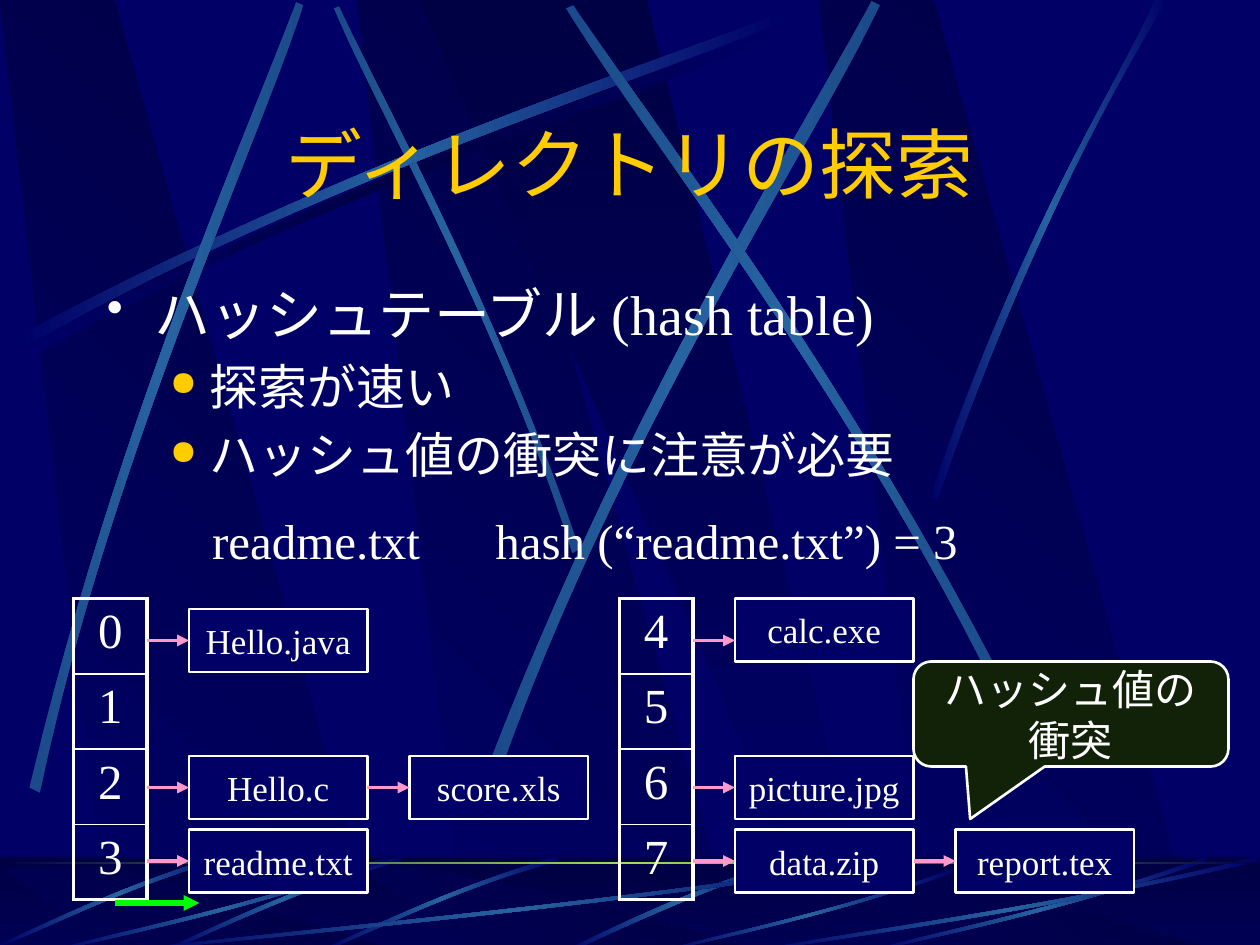
from lxml.etree import SubElement
from pptx import Presentation
from pptx.dml.color import RGBColor
from pptx.enum.shapes import MSO_CONNECTOR, MSO_SHAPE
from pptx.enum.text import MSO_ANCHOR, PP_ALIGN
from pptx.oxml.ns import qn
from pptx.util import Pt

PX = 7620  # 120 px to the inch
HEX = {"navy": "000066", "dark": "000044", "beam": "2663A0", "edge": "1B4A8A",
       "lime": "9CE157", "gold": "FFCC00", "white": "FFFFFF", "pink": "FF99CC",
       "green": "00FF00", "moss": "122208"}
RGB = {name: RGBColor.from_string(code) for name, code in HEX.items()}

deck = Presentation()
deck.slide_width, deck.slide_height = 1200 * PX, 900 * PX
slide = deck.slides.add_slide(deck.slide_layouts[6])
slide.background.fill.solid()
slide.background.fill.fore_color.rgb = RGB["navy"]
shapes = slide.shapes


def shade(shape, names, angle):
    """Fill with evenly spaced colours; the angle turns clockwise."""
    shape.shadow.inherit = False
    shape.line.fill.background()
    shape.fill.gradient()
    shape.fill.gradient_angle = (360 - angle) % 360
    stops = shape.element.spPr.find(qn("a:gradFill")).find(qn("a:gsLst"))
    for old in list(stops):
        stops.remove(old)
    for i, name in enumerate(names):
        stop = SubElement(stops, qn("a:gs"), pos=str(100000 * i // (len(names) - 1)))
        SubElement(stop, qn("a:srgbClr"), val=HEX[name])


def write(frame, lines, size, color="white", align=PP_ALIGN.CENTER, wrap=True):
    look = {"word_wrap": wrap, "margin_left": 12 * PX, "margin_right": 12 * PX,
            "margin_top": 6 * PX, "margin_bottom": 6 * PX}
    for key, value in look.items():
        setattr(frame, key, value)
    for i, line in enumerate(lines):
        para = frame.add_paragraph() if i else frame.paragraphs[0]
        para.alignment = align
        run = para.add_run()
        run.text = line
        for key, value in {"name": "Times New Roman", "size": Pt(size)}.items():
            setattr(run.font, key, value)
        run.font.color.rgb = RGB[color]


# Panels of the wall and the floor
wall, floor = [], []
for part, top, end in ((wall, 0, 900), (floor, 826, 900)):
    for x in (340, 0, 780):
        part.append(([(x + 103, end), (x + 362, end), (x + 109, top), (x, top)],
                     ["navy", "dark"], 315))
    part.append(([(400, top), (790, end), (833, end), (616, top)], ["dark", "navy"], 90))

# Ribbons: one curve out, one curve back
glow, beam = ["navy", "beam", "navy"], ["edge", "beam", "edge"]
long = [(24, 330), (341, 161), (629, 71), (751, 22), (755, 29), (634, 83), (305, 181), (28, 342)]
short = [(530, 816), (426, 846), (344, 888), (307, 904),
         (308, 906), (346, 892), (438, 844), (533, 820)]
sweep = [(320, 820), (182, 868), (56, 893), (2, 906), (0, 905), (53, 889), (197, 862), (318, 816)]
high = [
    (long, ["navy", "dark", "navy"], 0),
    ([(552, 523), (469, 281), (362, 92), (323, 6),
      (318, 8), (354, 95), (478, 310), (545, 527)], beam, 0),
    ([(x - 7, y - 10) for x, y in long], glow, 0),
    ([(28, 750), (112, 401), (236, 126), (282, 2),
      (289, 5), (248, 131), (103, 442), (38, 755)], beam, 0),
    ([(462, 737), (598, 384), (766, 122), (830, 1),
      (838, 5), (779, 130), (583, 426), (473, 745)], beam, 0),
    ([(967, 672), (804, 352), (619, 114), (546, 5),
      (539, 8), (608, 121), (822, 390), (959, 680)], beam, 0),
    ([(886, 473), (977, 208), (1066, 79), (1100, 0),
      (1112, 0), (1003, 174), (923, 386), (893, 476)], glow, 0),
]
low = [([(753, 818), (644, 851), (572, 890), (538, 905),
         (544, 906), (588, 886), (685, 840), (754, 822)], glow, 0)]
for dx, dy in ((0, 0), (-150, 0), (-307, -5)):
    low.append(([(x + dx, y + dy) for x, y in short], glow, 0))
for left, width, tall in ((120, 740, 90), (50, 320, 90), (632, 278, 79),
                          (830, 320, 90), (720, 480, 90)):
    low.append(([(left + x * width / 320, 906 - (906 - y) * tall / 90)
                 for x, y in sweep], glow, 0))

for group in (wall, high, floor, low):
    if group in (floor, low):
        plane = shapes.add_shape(MSO_SHAPE.RECTANGLE, 0, 816 * PX, 1200 * PX, 84 * PX)
        shade(plane, ["dark", "navy"], 90)
        if group is low:
            plane.fill.solid()
            plane.fill.fore_color.rgb = RGB["dark"]
            tint = plane.element.spPr.find(qn("a:solidFill"))[0]
            SubElement(tint, qn("a:alpha"), val="50000")
    for dots, names, angle in group:
        dots = [(x * PX, y * PX) for x, y in dots]
        pen = shapes.build_freeform(*dots[0], scale=1.0)
        pen.add_line_segments(dots[1:], close=True)
        form = pen.convert_to_shape()
        shade(form, names, angle)
        if group in (high, low):
            steps = list(form.element.spPr.iter(qn("a:lnTo")))
            for trio in (steps[:3], steps[4:7]):
                bend = SubElement(trio[0].getparent(), qn("a:cubicBezTo"))
                trio[0].addprevious(bend)
                for step in trio:
                    bend.append(step[0])
                    step.getparent().remove(step)
rim = shapes.add_shape(MSO_SHAPE.RECTANGLE, 0, 821 * PX, 1200 * PX, 2 * PX)
shade(rim, ["dark", "lime", "dark"], 0)

# Title and bullets
title = shapes.add_textbox(90 * PX, 105 * PX, 1020 * PX, 100 * PX).text_frame
write(title, ["ディレクトリの探索"], 44, "gold")
title.vertical_anchor = MSO_ANCHOR.MIDDLE
body = shapes.add_textbox(90 * PX, 260 * PX, 1020 * PX, 540 * PX).text_frame
write(body, ["ハッシュテーブル (hash table)", "探索が速い", "ハッシュ値の衝突に注意が必要"],
      32, align=PP_ALIGN.LEFT)
for i, para in enumerate(body.paragraphs):
    left, hang, mark, size, color = (98, 38, "●", 70, "gold") if i else (45, 45, "•", 85, "white")
    props = para._p.get_or_add_pPr()
    props.set("marL", str(left * PX))
    props.set("indent", str(-hang * PX))
    SubElement(SubElement(props, qn("a:buClr")), qn("a:srgbClr"), val=HEX[color])
    SubElement(props, qn("a:buSzPct"), val=str(size * 1000))
    SubElement(props, qn("a:buChar"), char=mark)
    if i:
        para.level = 1
        para.space_before = Pt(5.6)
        para.runs[0].font.size = Pt(28)

# Files in the buckets
files = [(180, 720, "Hello.c"), (180, 790, "readme.txt"), (180, 580, "Hello.java"),
         (910, 790, "report.tex"), (390, 720, "score.xls"), (700, 720, "picture.jpg"),
         (700, 570, "calc.exe"), (700, 790, "data.zip")]
boxes = []
for x, y, name in files:
    box = shapes.add_shape(MSO_SHAPE.RECTANGLE, x * PX, y * PX, 170 * PX, 60 * PX)
    boxes.append((box, "navy", [name], 20, False))

# Hash tables
for x, first in ((70, 0), (590, 4)):
    grid = shapes.add_table(4, 1, x * PX, 570 * PX, 70 * PX, 287 * PX).table
    grid.first_row = grid.horz_banding = False
    grid.columns[0].width = 70 * PX
    for i, row in enumerate(grid.rows):
        row.height = 287 * PX // 4
        cell = row.cells[0]
        write(cell.text_frame, [str(first + i)], 28)
        props = cell._tc.get_or_add_tcPr()
        for side, bold in (("L", True), ("R", True), ("T", i == 0), ("B", i == 3)):
            edge = SubElement(props, qn("a:ln" + side), w=str(Pt(2.25 if bold else 1)))
            SubElement(SubElement(edge, qn("a:solidFill")), qn("a:srgbClr"), val=HEX["white"])
        cell.fill.background()

for x, width, words in ((190, 222, "readme.txt"), (460, 464, "hash (“readme.txt”) = 3")):
    note = shapes.add_textbox(x * PX, 480 * PX, width * PX, 68 * PX)
    write(note.text_frame, [words], 28, wrap=False)

# Arrows
links = [(x - 40, x, 610 if y < 600 else y + 30, "pink", 2.25) for x, y, _ in files]
links.append((110, 190, 860, "green", 3))
for start, end, y, color, width in links:
    link = shapes.add_connector(MSO_CONNECTOR.STRAIGHT, start * PX, y * PX, end * PX, y * PX)
    link.line.color.rgb = RGB[color]
    link.line.width = Pt(width)
    props = link.element.spPr
    SubElement(props.find(qn("a:ln")), qn("a:tailEnd"), type="triangle")
    SubElement(props, qn("a:effectLst"))

# Callout, then the look of all boxes
call = shapes.add_shape(MSO_SHAPE.ROUNDED_RECTANGULAR_CALLOUT,
                        870 * PX, 630 * PX, 300 * PX, 100 * PX)
for i, value in enumerate((-0.32, 1, 0.17)):
    call.adjustments[i] = value
boxes.append((call, "moss", ["ハッシュ値の", "衝突"], 24, True))
for box, color, lines, size, wrap in boxes:
    box.shadow.inherit = False
    box.fill.solid()
    box.fill.fore_color.rgb = RGB[color]
    box.line.color.rgb = RGB["white"]
    box.line.width = Pt(1.5)
    write(box.text_frame, lines, size, wrap=wrap)
    box.text_frame.vertical_anchor = MSO_ANCHOR.MIDDLE

deck.save("out.pptx")
